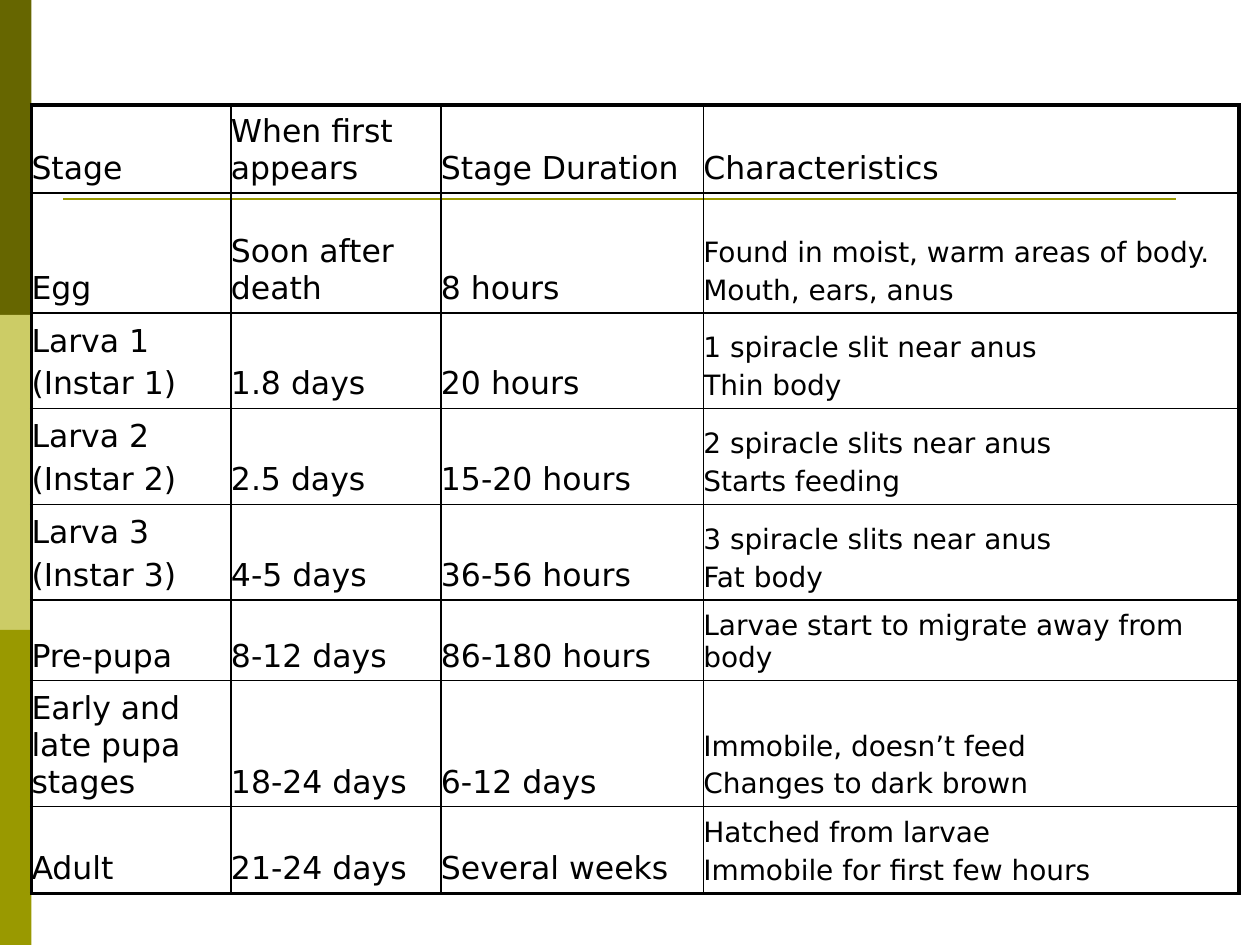
from lxml.etree import SubElement
from pptx import Presentation
from pptx.dml.color import RGBColor
from pptx.enum.shapes import MSO_CONNECTOR, MSO_SHAPE
from pptx.enum.text import MSO_ANCHOR
from pptx.oxml import parse_xml
from pptx.oxml.ns import nsdecls, qn
from pptx.util import Pt

BLACK = RGBColor(0x00, 0x00, 0x00)
DARK_OLIVE = RGBColor(0x66, 0x66, 0x00)
PALE_OLIVE = RGBColor(0xCC, 0xCC, 0x66)
OLIVE = RGBColor(0x99, 0x99, 0x00)
FONT = "DejaVu Sans"
OUTER, INNER = Pt(2.25), Pt(1)

COLUMN_WIDTHS = [114, 120, 150, 306]
ROW_HEIGHTS = [50.4, 68.4, 54.72, 54.72, 54.72, 46.08, 72, 49.68]
STAGES = [
    ["Stage", "When first appears", "Stage Duration", "Characteristics"],
    ["Egg", "Soon after death", "8 hours",
     "Found in moist, warm areas of body.\nMouth, ears, anus"],
    ["Larva 1\n(Instar 1)", "1.8 days", "20 hours",
     "1 spiracle slit near anus\nThin body"],
    ["Larva 2\n(Instar 2)", "2.5 days", "15-20 hours",
     "2 spiracle slits near anus\nStarts feeding"],
    ["Larva 3\n(Instar 3)", "4-5 days", "36-56 hours",
     "3 spiracle slits near anus\nFat body"],
    ["Pre-pupa", "8-12 days", "86-180 hours",
     "Larvae start to migrate away from body"],
    ["Early and late pupa stages", "18-24 days", "6-12 days",
     "Immobile, doesn’t feed\nChanges to dark brown"],
    ["Adult", "21-24 days", "Several weeks",
     "Hatched from larvae\nImmobile for first few hours"],
]


def set_borders(cell, widths):
    """Draw the left, right, top and bottom borders, ahead of the cell's fill."""
    properties = cell._tc.get_or_add_tcPr()
    for position, (side, width) in enumerate(zip("LRTB", widths)):
        properties.insert(position, parse_xml(
            f'<a:ln{side} {nsdecls("a")} w="{width}"><a:solidFill>'
            f'<a:srgbClr val="{BLACK}"/></a:solidFill></a:ln{side}>'))


presentation = Presentation()
presentation.slide_width = Pt(720)
presentation.slide_height = Pt(540)
slide = presentation.slides.add_slide(presentation.slide_layouts[6])

# Side bands, with the rule between the first and the second
for index, colour in enumerate([DARK_OLIVE, PALE_OLIVE, OLIVE]):
    band = slide.shapes.add_shape(
        MSO_SHAPE.RECTANGLE, Pt(0), Pt(180 * index), Pt(18), Pt(180))
    band.shadow.inherit = False
    band.fill.solid()
    band.fill.fore_color.rgb = colour
    band.line.fill.background()
    if index == 0:
        rule = slide.shapes.add_connector(
            MSO_CONNECTOR.STRAIGHT, Pt(36), Pt(113.76), Pt(672), Pt(113.76))
        rule.line.color.rgb = OLIVE
        rule.line.width = Pt(1.5)
        SubElement(rule._element.spPr, qn("a:effectLst"))

# Table of life stages
stage_table = slide.shapes.add_table(
    len(ROW_HEIGHTS), len(COLUMN_WIDTHS), Pt(18), Pt(60),
    Pt(sum(COLUMN_WIDTHS)), Pt(sum(ROW_HEIGHTS))).table
stage_table.first_row = False
stage_table.horz_banding = False
for column, width in zip(stage_table.columns, COLUMN_WIDTHS):
    column.width = Pt(width)
for row, height in zip(stage_table.rows, ROW_HEIGHTS):
    row.height = Pt(height)

last_row, last_column = len(ROW_HEIGHTS) - 1, len(COLUMN_WIDTHS) - 1
for r, stage in enumerate(STAGES):
    for c, wording in enumerate(stage):
        cell = stage_table.cell(r, c)
        cell.text = wording
        cell.fill.background()
        cell.vertical_anchor = MSO_ANCHOR.BOTTOM
        cell.margin_left = cell.margin_right = Pt(0)
        cell.margin_top = cell.margin_bottom = Pt(3.6)
        size = 16 if r > 0 and c == last_column else 18
        for index, paragraph in enumerate(cell.text_frame.paragraphs):
            paragraph.font.name = FONT
            paragraph.font.size = Pt(size)
            paragraph.font.color.rgb = BLACK
            if index > 0:
                paragraph.space_before = Pt(size * 0.2)
        on_edge = [c == 0, c == last_column, r == 0, r == last_row]
        set_borders(cell, [OUTER if edge else INNER for edge in on_edge])

presentation.save("out.pptx")
